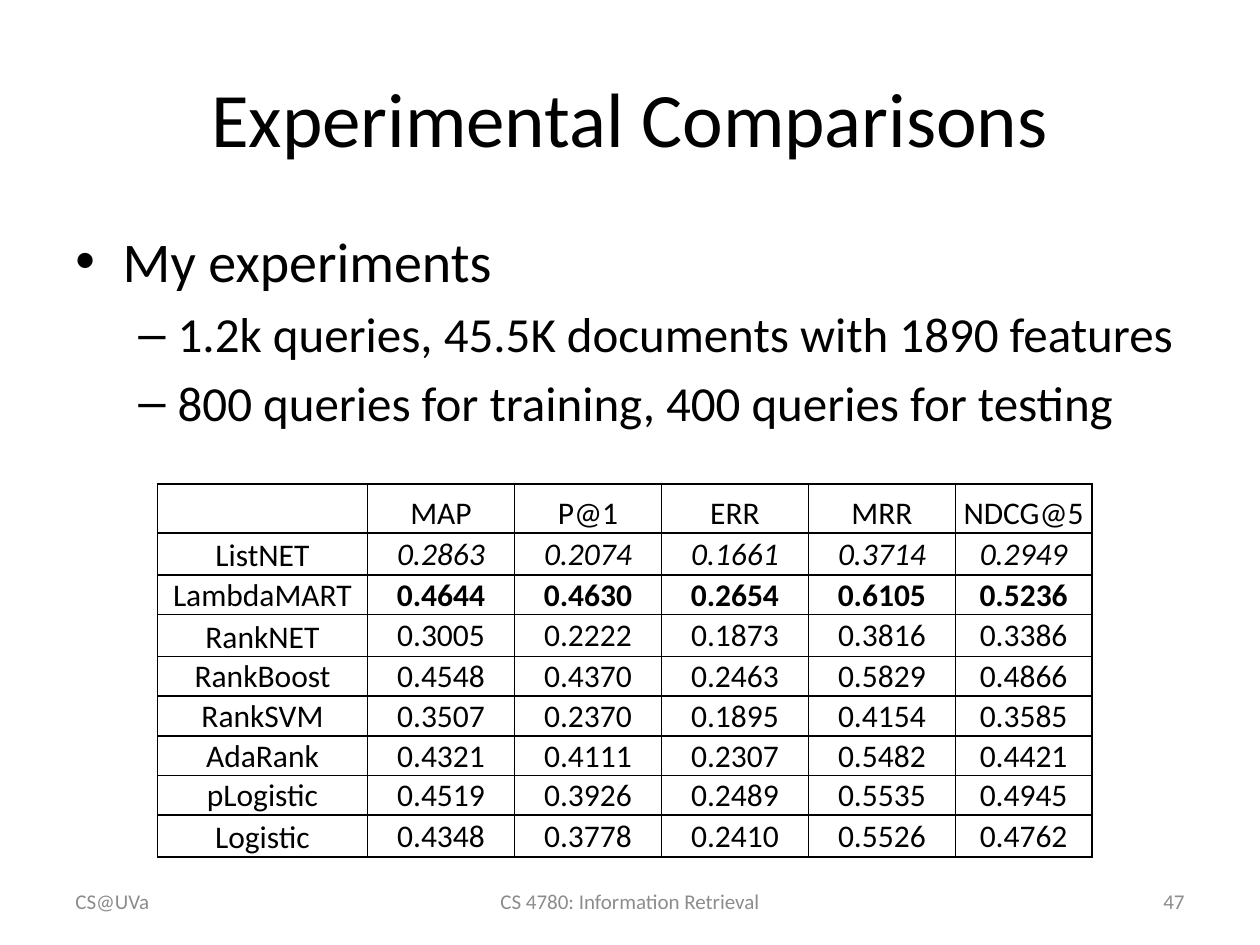
"""Build the slide that compares learning-to-rank methods."""
from dataclasses import dataclass

import lxml.etree
import pptx
import pptx.dml.color
import pptx.enum.text
import pptx.oxml.ns
import pptx.util

Pt = pptx.util.Pt
Align = pptx.enum.text.PP_ALIGN
Anchor = pptx.enum.text.MSO_ANCHOR
qn = pptx.oxml.ns.qn


@dataclass(frozen=True)
class Theme:
    font: str = "Calibri"
    ink: str = "000000"
    muted: str = "8C8C8C"
    title: int = 44
    topic: int = 32
    detail: int = 28
    results: int = 18
    footer: int = 12


THEME = Theme()
METRICS = ["", "MAP", "P@1", "ERR", "MRR", "NDCG@5"]
RESULTS = [
    ["ListNET", "0.2863", "0.2074", "0.1661", "0.3714", "0.2949"],
    ["LambdaMART", "0.4644", "0.4630", "0.2654", "0.6105", "0.5236"],
    ["RankNET", "0.3005", "0.2222", "0.1873", "0.3816", "0.3386"],
    ["RankBoost", "0.4548", "0.4370", "0.2463", "0.5829", "0.4866"],
    ["RankSVM", "0.3507", "0.2370", "0.1895", "0.4154", "0.3585"],
    ["AdaRank", "0.4321", "0.4111", "0.2307", "0.5482", "0.4421"],
    ["pLogistic", "0.4519", "0.3926", "0.2489", "0.5535", "0.4945"],
    ["Logistic", "0.4348", "0.3778", "0.2410", "0.5526", "0.4762"],
]
WORST, BEST = "ListNET", "LambdaMART"
COLUMN_WIDTHS = [120, 84, 84, 84, 84, 78]
ROW_HEIGHTS = [28, 24, 22.7, 24, 22.7, 22.7, 22.7, 22.7, 24]


def style(paragraph, size, color=THEME.ink, align=Align.LEFT, bold=False, italic=False):
    paragraph.alignment = align
    for font in [paragraph.font] + [run.font for run in paragraph.runs]:
        font.name, font.size = THEME.font, Pt(size)
        font.bold, font.italic = bold, italic
        font.color.rgb = pptx.dml.color.RGBColor.from_string(color)


def add_text(slide, box, text, anchor=Anchor.MIDDLE):
    frame = slide.shapes.add_textbox(*map(Pt, box)).text_frame
    frame.word_wrap = True
    frame.vertical_anchor = anchor
    frame.text = text
    return frame


def add_line_of_text(slide, box, text, size, color, align):
    style(add_text(slide, box, text).paragraphs[0], size, color, align)


def set_bullet(paragraph, mark, margin, hanging):
    properties = paragraph._p.get_or_add_pPr()
    properties.set("marL", str(Pt(margin)))
    properties.set("indent", str(-Pt(hanging)))
    bullet_font = lxml.etree.Element(qn("a:buFont"), typeface="Arial")
    bullet = lxml.etree.Element(qn("a:buChar"), char=mark)
    spacing = properties.find(qn("a:spcBef"))
    spacing.addnext(bullet_font)
    bullet_font.addnext(bullet)


def add_outline(slide, box, topic, details):
    outline = add_text(slide, box, "\n".join([topic] + details), Anchor.TOP)
    for index, paragraph in enumerate(outline.paragraphs):
        paragraph.level = min(index, 1)
        size = THEME.detail if index else THEME.topic
        style(paragraph, size)
        paragraph.space_before = Pt(size * 0.2)
        set_bullet(paragraph, *(("–", 58.5, 22.5) if index else ("•", 27, 27)))


def set_borders(cell):
    properties = cell._tc.get_or_add_tcPr()
    for position, side in enumerate(("a:lnL", "a:lnR", "a:lnT", "a:lnB")):
        border = lxml.etree.Element(qn(side), w=str(Pt(1)))
        fill = lxml.etree.SubElement(border, qn("a:solidFill"))
        lxml.etree.SubElement(fill, qn("a:srgbClr"), val=THEME.ink)
        properties.insert(position, border)


def fill_cell(cell, text, anchor, bold, italic):
    cell.text = text
    cell.fill.background()
    cell.margin_left = cell.margin_right = cell.margin_top = Pt(0.72)
    cell.margin_bottom = 0
    cell.vertical_anchor = anchor
    style(cell.text_frame.paragraphs[0], THEME.results, align=Align.CENTER,
          bold=bold, italic=italic)
    set_borders(cell)


def add_results(slide, left, top):
    rows = [METRICS] + RESULTS
    size = (sum(COLUMN_WIDTHS), sum(ROW_HEIGHTS))
    results = slide.shapes.add_table(len(rows), len(METRICS),
                                     *map(Pt, (left, top, *size))).table
    results.first_row = results.horz_banding = False
    for column, width in zip(results.columns, COLUMN_WIDTHS):
        column.width = Pt(width)
    for r, (row, height) in enumerate(zip(rows, ROW_HEIGHTS)):
        results.rows[r].height = Pt(height)
        for c, text in enumerate(row):
            is_score = r > 0 and c > 0
            fill_cell(results.cell(r, c), text,
                      Anchor.MIDDLE if is_score else Anchor.BOTTOM,
                      bold=is_score and row[0] == BEST,
                      italic=is_score and row[0] == WORST)


def main():
    deck = pptx.Presentation()
    deck.slide_width, deck.slide_height = Pt(720), Pt(540)
    slide = deck.slides.add_slide(deck.slide_layouts[6])
    add_line_of_text(slide, (36, 21.6, 648, 90), "Experimental Comparisons",
                     THEME.title, THEME.ink, Align.CENTER)
    add_outline(slide, (36, 126, 648, 356.4), "My experiments", [
        "1.2k queries, 45.5K documents with 1890 features",
        "800 queries for training, 400 queries for testing",
    ])
    add_results(slide, 90, 276.5)
    for left, width, text, align in (
        (36, 168, "CS@UVa", Align.LEFT),
        (246, 228, "CS 4780: Information Retrieval", Align.CENTER),
        (516, 168, "47", Align.RIGHT),
    ):
        add_line_of_text(slide, (left, 500.5, width, 28.8), text,
                         THEME.footer, THEME.muted, align)
    deck.save("out.pptx")


if __name__ == "__main__":
    main()
